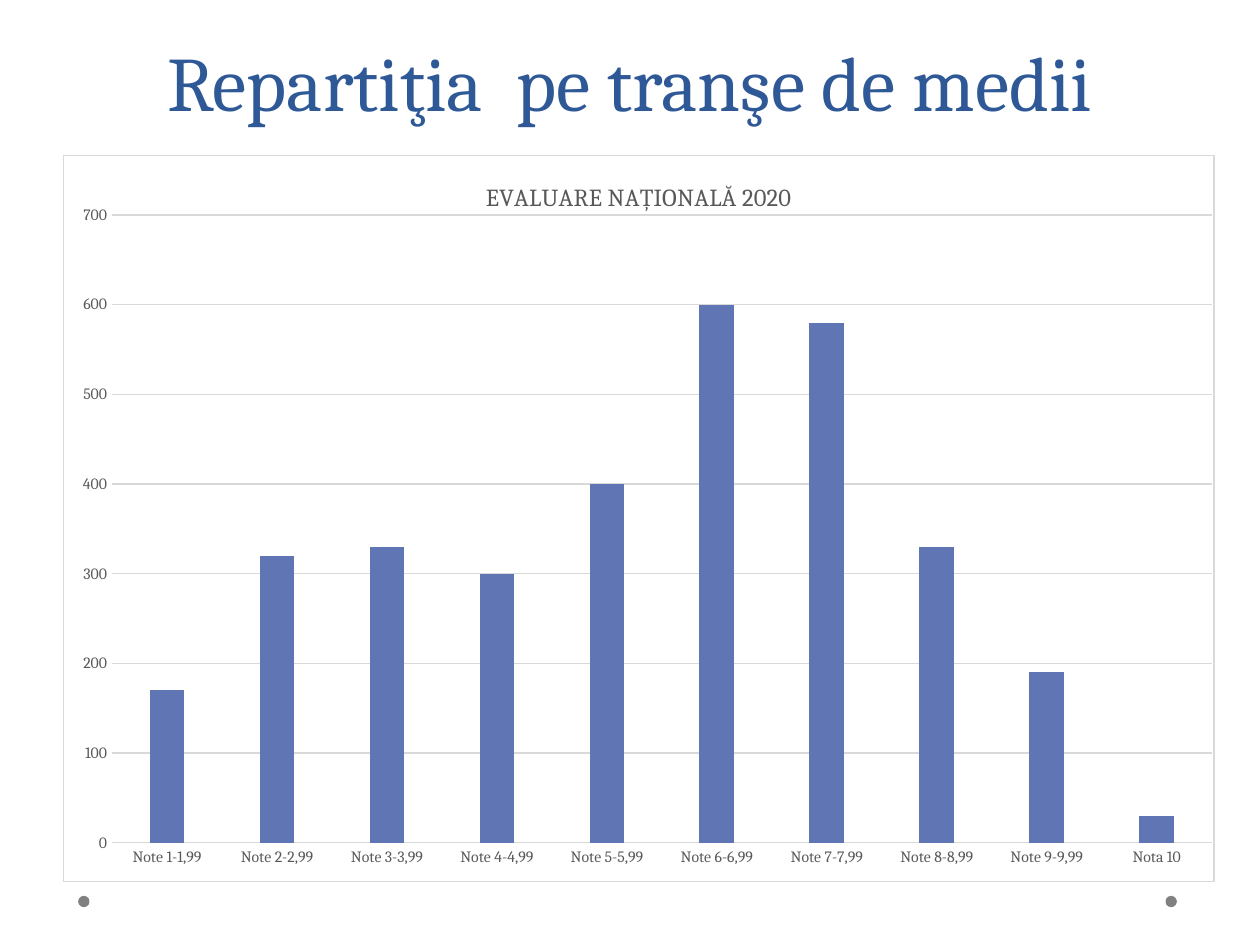
"""Build a slide with a column chart of exam results by grade band."""
from lxml import etree
from pptx import Presentation
from pptx.chart.data import CategoryChartData
from pptx.dml.color import RGBColor
from pptx.enum import chart as ch, shapes, text
from pptx.oxml import ns
from pptx.util import Inches, Pt

TITLE = "Repartiţia  pe tranşe de medii"
CHART_TITLE = "EVALUARE NAȚIONALĂ 2020"
BANDS = [f"Note {n}-{n},99" for n in range(1, 10)] + ["Nota 10"]
COUNTS = [170, 320, 330, 300, 400, 600, 580, 330, 190, 30]
COLORS = {"title": "2F5897", "bar": "6076B4", "text": "595959",
          "line": "D9D9D9", "dot": "808080", "back": "FFFFFF"}
PLOT = {"x": 0.042, "y": 0.082, "w": 0.956, "h": 0.865}
FONT = "Cambria"


def rgb(name):
    return RGBColor.from_string(COLORS[name])


def style(font, size, color):
    font.name, font.size, font.bold = FONT, Pt(size), False
    font.color.rgb = rgb(color)


def rule(line):
    line.color.rgb = rgb("line")
    line.width = Pt(0.75)


def add_dot(s, left):
    sp = s.shapes.add_shape(shapes.MSO_SHAPE.OVAL, Inches(left), Inches(7.11),
                            Inches(0.09), Inches(0.09))
    sp.shadow.inherit = False
    sp.fill.solid()
    sp.fill.fore_color.rgb = rgb("dot")
    sp.line.fill.background()


def add_title(s):
    sp = s.shapes.title
    sp.left, sp.top, sp.width, sp.height = map(Inches, (0.56, 0.09, 8.88, 0.97))
    tf = sp.text_frame
    tf.text = TITLE
    tf.vertical_anchor = text.MSO_ANCHOR.BOTTOM
    p = tf.paragraphs[0]
    p.alignment = text.PP_ALIGN.CENTER
    p.line_spacing = Pt(58)
    style(p.runs[0].font, 44, "title")


def frame_chart(chart):
    c, a = ns.nsdecls("c"), ns.nsdecls("a")
    sides = "".join(f'<c:{k} val="{v}"/>' for k, v in PLOT.items())
    layout = etree.fromstring(
        f'<c:layout {c}><c:manualLayout><c:layoutTarget val="inner"/>'
        f'<c:xMode val="edge"/><c:yMode val="edge"/>{sides}'
        '</c:manualLayout></c:layout>')
    area = chart._chartSpace.chart.plotArea
    for old in area.findall(ns.qn("c:layout")):
        area.remove(old)
    area.insert(0, layout)
    border = etree.fromstring(
        f'<c:spPr {c} {a}><a:solidFill><a:srgbClr val="{COLORS["back"]}"/></a:solidFill>'
        f'<a:ln w="{Pt(0.75)}"><a:solidFill><a:srgbClr val="{COLORS["line"]}"/>'
        '</a:solidFill></a:ln></c:spPr>')
    chart._chartSpace.chart.addnext(border)


def add_bands_chart(s):
    data = CategoryChartData()
    data.categories = BANDS
    data.add_series("Series 1", COUNTS)
    box = map(Inches, (0.5, 1.23, 9.14, 5.77))
    chart = s.shapes.add_chart(ch.XL_CHART_TYPE.COLUMN_CLUSTERED, *box, data).chart
    chart.has_legend = False
    chart.font.name, chart.font.size = FONT, Pt(10)
    tf = chart.chart_title.text_frame
    tf.text = CHART_TITLE
    style(tf.paragraphs[0].runs[0].font, 14, "text")
    chart.chart_title.include_in_layout = False

    plot = chart.plots[0]
    plot.gap_width, plot.overlap, plot.vary_by_categories = 219, -27, False
    fill = plot.series[0].format.fill
    fill.solid()
    fill.fore_color.rgb = rgb("bar")

    for axis in (chart.category_axis, chart.value_axis):
        style(axis.tick_labels.font, 9, "text")
        axis.major_tick_mark = axis.minor_tick_mark = ch.XL_TICK_MARK.NONE
    rule(chart.category_axis.format.line)
    values = chart.value_axis
    values.minimum_scale, values.maximum_scale, values.major_unit = 0, 700, 100
    values.format.line.fill.background()
    rule(values.major_gridlines.format.line)
    frame_chart(chart)


def main():
    prs = Presentation()
    prs.slide_width, prs.slide_height = Inches(10), Inches(7.5)
    s = prs.slides.add_slide(prs.slide_layouts[5])
    for left in (9.25, 0.62):
        add_dot(s, left)
    add_title(s)
    add_bands_chart(s)
    prs.save("out.pptx")


if __name__ == "__main__":
    main()
